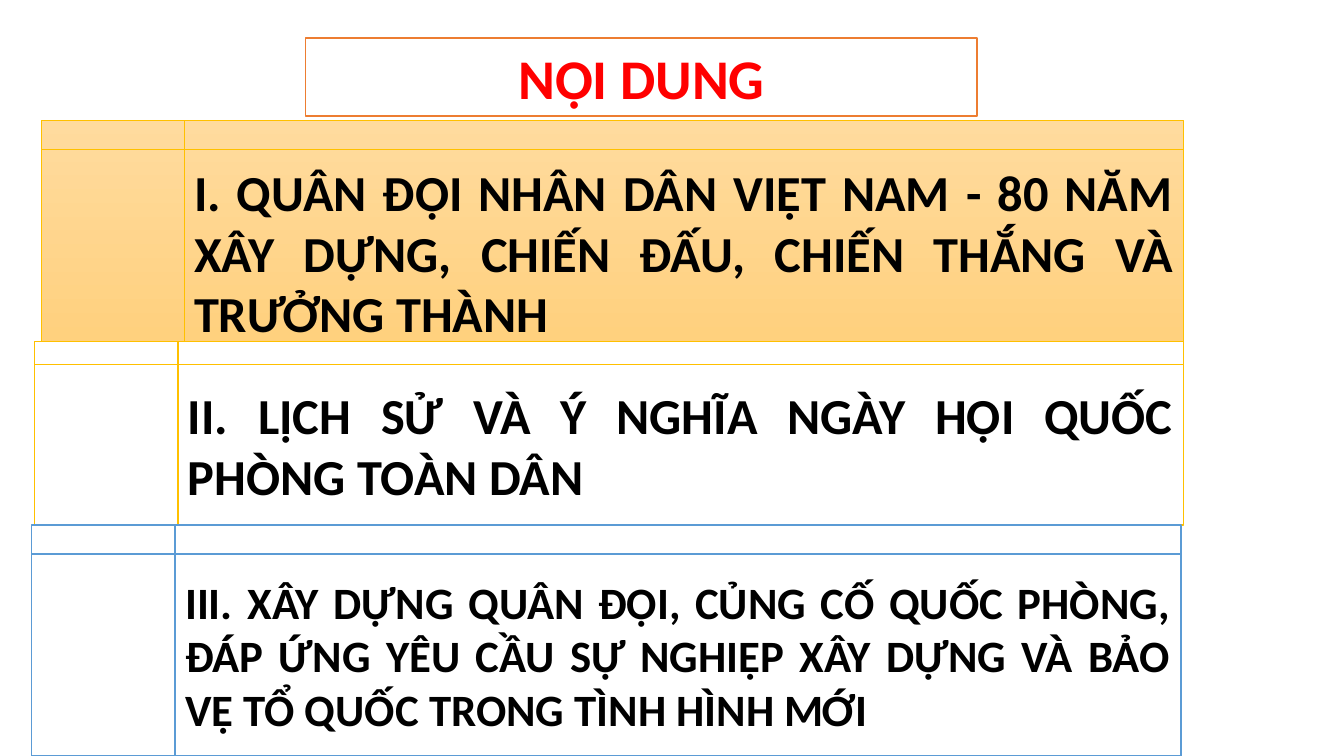
"""Build the contents slide with a title and three section boxes."""
from pptx import Presentation
from pptx.dml.color import RGBColor
from pptx.enum.shapes import MSO_SHAPE as Shape
from pptx.enum.text import MSO_ANCHOR as Anchor, MSO_AUTO_SIZE as Fit, PP_ALIGN as Align
from pptx.util import Pt

BLACK = RGBColor(0, 0, 0)
WHITE = RGBColor(255, 255, 255)
RED = RGBColor(255, 0, 0)
GOLD = RGBColor(0xFF, 0xC0, 0x00)
BLUE = RGBColor(0x5B, 0x9B, 0xD5)
ORANGE = RGBColor(0xED, 0x7D, 0x31)
PALE = RGBColor(0xFF, 0xDB, 0x9E)
AMBER = RGBColor(0xFF, 0xD0, 0x7C)


class Deck:
    def __init__(self):
        self.prs = Presentation()
        self.prs.slide_width, self.prs.slide_height = Pt(960), Pt(540)
        self.slide = self.prs.slides.add_slide(self.prs.slide_layouts[5])
        self.font = {"name": "Calibri", "bold": True}
        self.frame = {"word_wrap": True, "auto_size": Fit.NONE,
                      "vertical_anchor": Anchor.MIDDLE,
                      "margin_left": Pt(7.2), "margin_right": Pt(7.2),
                      "margin_top": Pt(3.6), "margin_bottom": Pt(3.6)}

    def apply(self, item, values):
        for name, value in values.items():
            setattr(item, name, value)

    def paint(self, shape, fill, line, width):
        if len(fill) == 1:
            shape.fill.solid()
            shape.fill.fore_color.rgb = fill[0]
        else:
            shape.fill.gradient()
            shape.fill.gradient_angle = 270
            for stop, color in zip(shape.fill.gradient_stops, fill):
                stop.color.rgb = color
        shape.line.color.rgb = line
        shape.line.width = Pt(width)

    def label(self, shape, text, size, color, align):
        self.apply(shape.text_frame, self.frame)
        par = shape.text_frame.paragraphs[0]
        self.apply(par, {"alignment": align, "line_spacing": 1.0})
        run = par.add_run()
        run.text = text
        self.apply(run.font, {**self.font, "size": Pt(size)})
        run.font.color.rgb = color

    def title(self, text, left, top, width, height):
        shape = self.slide.shapes.title
        self.apply(shape, {"left": Pt(left), "top": Pt(top),
                           "width": Pt(width), "height": Pt(height)})
        self.paint(shape, [WHITE], ORANGE, 1)
        self.label(shape, text, 40, RED, Align.CENTER)

    def box(self, text, size, place, fill, line, width):
        shape = self.slide.shapes.add_shape(
            Shape.FLOWCHART_INTERNAL_STORAGE, *map(Pt, place))
        shape.shadow.inherit = False
        self.paint(shape, fill, line, width)
        self.label(shape, text, size, BLACK, Align.JUSTIFY)


def main():
    deck = Deck()
    deck.title("NỘI DUNG", 218.4, 27.2, 479.5, 55.6)
    parts = [
        ("I. QUÂN ĐỘI NHÂN DÂN VIỆT NAM - 80 NĂM XÂY DỰNG, CHIẾN ĐẤU, "
         "CHIẾN THẮNG VÀ TRƯỞNG THÀNH",
         36, (29.5, 86, 816, 167), [PALE, AMBER], GOLD, 0.5),
        ("II. LỊCH SỬ VÀ Ý NGHĨA NGÀY HỘI QUỐC PHÒNG TOÀN DÂN",
         36, (24.5, 244, 821, 131), [WHITE], GOLD, 1),
        ("III. XÂY DỰNG QUÂN ĐỘI, CỦNG CỐ QUỐC PHÒNG, ĐÁP ỨNG YÊU CẦU "
         "SỰ NGHIỆP XÂY DỰNG VÀ BẢO VỆ TỔ QUỐC TRONG TÌNH HÌNH MỚI",
         32, (22.5, 375, 821, 165), [WHITE], BLUE, 1),
    ]
    for part in parts:
        deck.box(*part)
    deck.prs.save("out.pptx")


if __name__ == "__main__":
    main()
